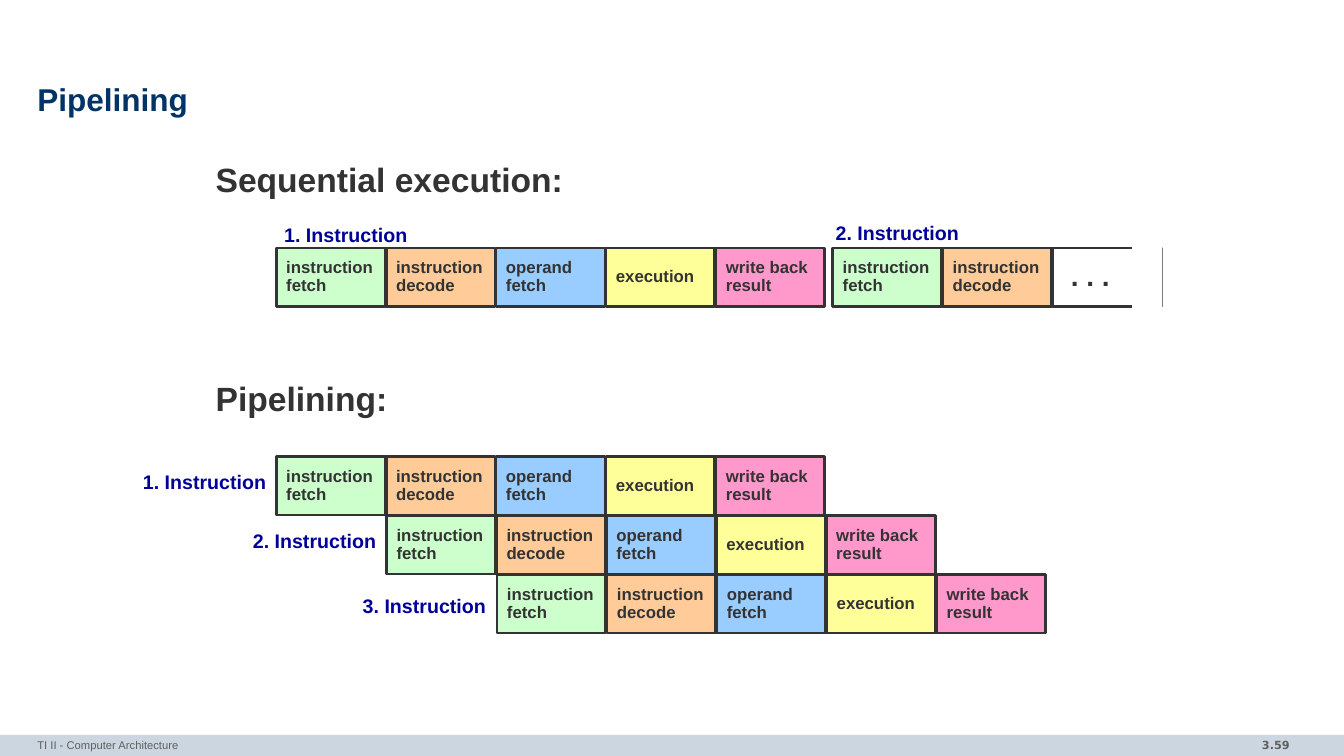
from pptx import Presentation
from pptx.dml.color import RGBColor
from pptx.enum.shapes import MSO_SHAPE as Shape
from pptx.enum.text import MSO_ANCHOR as Anchor, PP_ALIGN as Align
from pptx.util import Inches, Pt

NAVY = RGBColor(0x00, 0x33, 0x66)
BLUE = RGBColor(0x00, 0x00, 0x99)
DARK = RGBColor(0x33, 0x33, 0x33)
GREY = RGBColor(0x5F, 0x5F, 0x5F)
BAR = RGBColor(0xCC, 0xD6, 0xE0)
WHITE = RGBColor(0xFF, 0xFF, 0xFF)
STAGES = [
    ("instruction\nfetch", RGBColor(0xCC, 0xFF, 0xCC)),
    ("instruction\ndecode", RGBColor(0xFF, 0xCC, 0x99)),
    ("operand\nfetch", RGBColor(0x99, 0xCC, 0xFF)),
    ("execution", RGBColor(0xFF, 0xFF, 0x99)),
    ("write back\nresult", RGBColor(0xFF, 0x99, 0xCC)),
]
LEFT, COL, ROW = 2.74, 1.09, 0.585
SEQ, PIPE, NEXT = 2.46, 4.53, 8.26

deck = Presentation()
deck.slide_width, deck.slide_height = Inches(13.33), Inches(7.5)
slide = deck.slides.add_slide(deck.slide_layouts[5])
shapes = slide.shapes


def write(shape, text, size, color, bold=True, align=Align.LEFT, space=1.0, font="Arial"):
    frame = shape.text_frame
    frame.word_wrap = True
    frame.text = text
    for par in frame.paragraphs:
        par.alignment = align
        par.line_spacing = space
        par.font.name = font
        par.font.size = Pt(size)
        par.font.bold = bold
        par.font.color.rgb = color
    return frame


def block(x, y, w, h, fill, edge=None):
    rect = shapes.add_shape(Shape.RECTANGLE, Inches(x), Inches(y), Inches(w), Inches(h))
    rect.shadow.inherit = False
    rect.fill.solid()
    rect.fill.fore_color.rgb = fill
    if edge is None:
        rect.line.fill.background()
    else:
        rect.line.color.rgb = edge
        rect.line.width = Pt(2)
    return rect


block(0, 7.29, 13.33, 0.21, BAR)

title = shapes.title
title.left, title.top = Inches(0.37), Inches(0.78)
title.width, title.height = Inches(12.6), Inches(0.47)
frame = write(title, "Pipelining", 22.5, NAVY, space=0.85)
frame.vertical_anchor = Anchor.MIDDLE
frame.margin_left = frame.margin_right = frame.margin_top = frame.margin_bottom = 0

page = shapes.add_textbox(Inches(11.1), Inches(7.28), Inches(1.79), Inches(0.23))
write(page, "3.59", 8, GREY, align=Align.RIGHT, font="DejaVu Sans")
foot = shapes.add_textbox(Inches(0.37), Inches(7.28), Inches(8.72), Inches(0.22))
frame = write(foot, "TI II - Computer Architecture", 8, GREY, bold=False)
frame.margin_left = frame.margin_right = 0

for text, y in [("Sequential execution:", 1.53), ("Pipelining:", 3.7)]:
    head = shapes.add_textbox(Inches(2.04), Inches(y), Inches(5.95), Inches(0.5))
    write(head, text, 24, DARK)

more = STAGES[:2] + [(". . .", WHITE)]
runs = [(LEFT, SEQ, STAGES), (NEXT, SEQ, more)]
runs += [(LEFT + n * 1.095, PIPE + n * ROW, STAGES) for n in range(3)]
for x, y, stages in runs:
    for col, (text, fill) in enumerate(stages):
        dots = fill == WHITE
        rect = block(x + col * COL, y, 1.08, 0.58, fill, DARK)
        frame = write(rect, text, 20 if dots else 12, DARK, space=0.9)
        frame.vertical_anchor = Anchor.MIDDLE
        frame.margin_left = Inches(0.18 if dots else 0.1)
        frame.margin_right = 0

block(11.23, 2.39, 0.3, 0.7, WHITE)

labels = [
    (1, 2.72, 2.16, 1.98, Align.LEFT),
    (2, 8.19, 2.14, 2.18, Align.LEFT),
    (1, 1.15, 4.61, 1.59, Align.RIGHT),
    (2, 2.04, 5.2, 1.79, Align.RIGHT),
    (3, 3.2, 5.84, 1.72, Align.RIGHT),
]
for num, x, y, w, align in labels:
    label = shapes.add_textbox(Inches(x), Inches(y), Inches(w), Inches(0.34))
    write(label, f"{num}. Instruction", 14, BLUE, align=align)

deck.save("out.pptx")
